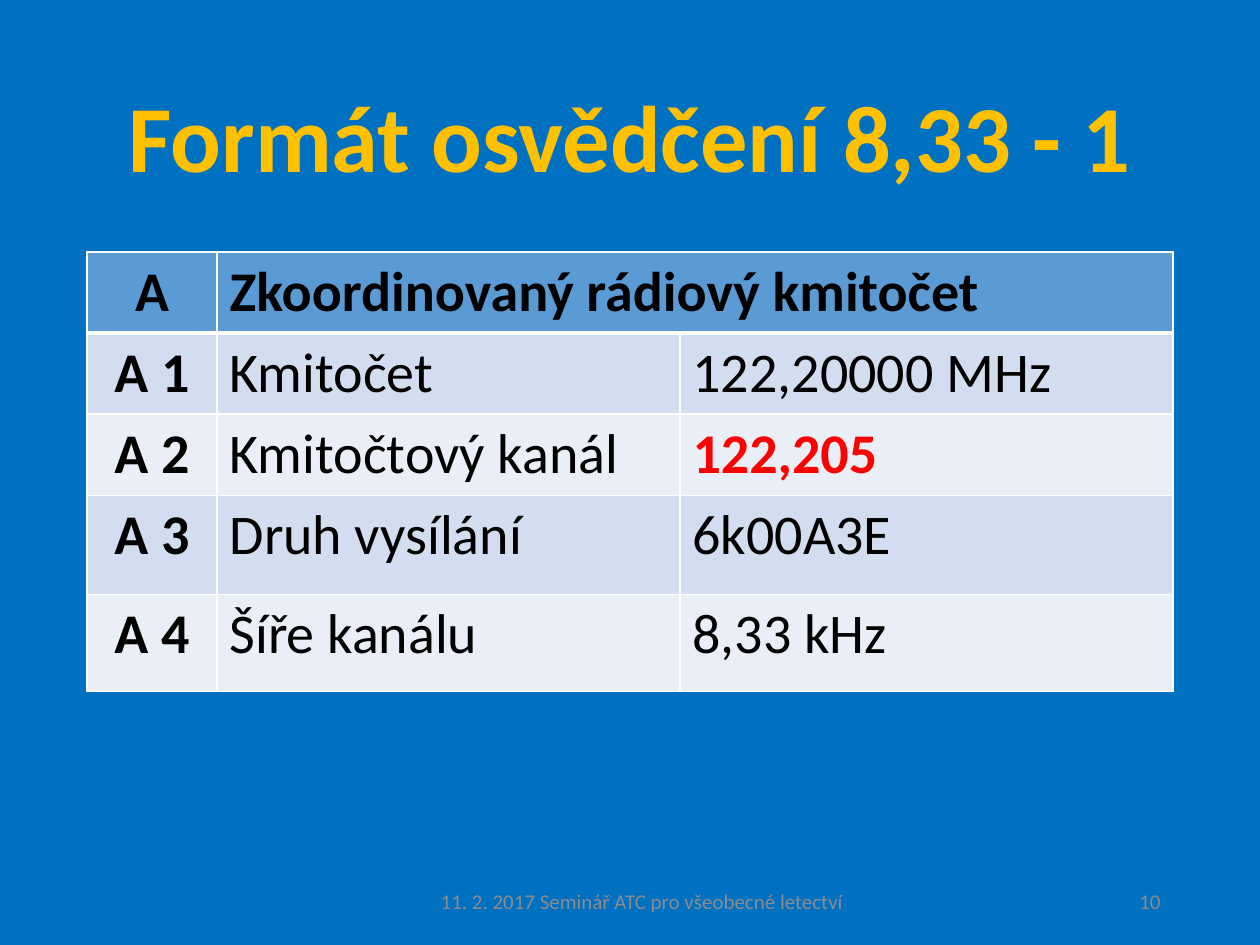
from dataclasses import dataclass

from lxml.etree import SubElement
from pptx import Presentation
from pptx.dml.color import RGBColor
from pptx.enum.text import MSO_ANCHOR, PP_ALIGN
from pptx.oxml.ns import qn
from pptx.slide import Slide
from pptx.table import _Cell
from pptx.text.text import TextFrame
from pptx.util import Emu, Pt

EMU_PER_INCH, PX_PER_INCH = 914400, 126


@dataclass(frozen=True)
class Theme:
    font: str = "Calibri"
    background: str = "0070C0"
    title: str = "FFC000"
    text: str = "000000"
    accent: str = "FF0000"
    footer: str = "8C8C8C"
    header_fill: str = "5B9BD5"
    bands: tuple[str, str] = ("D2DEEF", "EAEFF7")
    border: str = "FFFFFF"
    title_size: int = 54
    table_size: int = 32
    footer_size: int = 12
    thin_border: int = 1
    header_border: int = 3


@dataclass(frozen=True)
class Box:
    left: int
    top: int
    width: int
    height: int

    def emu(self) -> tuple[Emu, Emu, Emu, Emu]:
        return px(self.left), px(self.top), px(self.width), px(self.height)


@dataclass(frozen=True)
class Row:
    code: str
    label: str
    value: str
    height: int
    accent: bool = False


@dataclass(frozen=True)
class Footer:
    text: str
    box: Box
    align: PP_ALIGN


THEME = Theme()
TITLE = "Formát osvědčení 8,33 - 1"
TITLE_BOX = Box(87, 50, 1086, 183)
TABLE_BOX = Box(87, 252, 1086, 439)
COLUMNS = (130, 463, 493)
ROWS = (
    Row("A", "Zkoordinovaný rádiový kmitočet", "", 81),
    Row("A 1", "Kmitočet", "122,20000 MHz", 81),
    Row("A 2", "Kmitočtový kanál", "122,205", 81, accent=True),
    Row("A 3", "Druh vysílání", "6k00A3E", 99),
    Row("A 4", "Šíře kanálu", "8,33 kHz", 97),
)
FOOTERS = (
    Footer("10", Box(890, 876, 283, 50), PP_ALIGN.RIGHT),
    Footer("11. 2. 2017 Seminář ATC pro všeobecné letectví", Box(417, 876, 450, 50), PP_ALIGN.CENTER),
)


def px(length: int) -> Emu:
    return Emu(round(length * EMU_PER_INCH / PX_PER_INCH))


def write(frame: TextFrame, text: str, size: int, color: str,
          align: PP_ALIGN = PP_ALIGN.LEFT, bold: bool = False) -> None:
    frame.word_wrap = True
    para = frame.paragraphs[0]
    para.text = text
    para.alignment = align
    para.font.name = THEME.font
    para.font.size = Pt(size)
    para.font.bold = bold
    para.font.color.rgb = RGBColor.from_string(color)


def set_borders(cell: _Cell, top: int, bottom: int) -> None:
    properties = cell._tc.get_or_add_tcPr()
    widths = {"L": THEME.thin_border, "R": THEME.thin_border, "T": top, "B": bottom}
    for side, width in widths.items():
        line = SubElement(properties, qn(f"a:ln{side}"), w=str(Pt(width)))
        fill = SubElement(line, qn("a:solidFill"))
        SubElement(fill, qn("a:srgbClr"), val=THEME.border)


def add_title(page: Slide) -> None:
    title = page.shapes.title
    title.left, title.top, title.width, title.height = TITLE_BOX.emu()
    title.text_frame.vertical_anchor = MSO_ANCHOR.MIDDLE
    write(title.text_frame, TITLE, THEME.title_size, THEME.title, PP_ALIGN.CENTER, bold=True)
    title.text_frame.paragraphs[0].line_spacing = 0.9


def add_certificate_table(page: Slide) -> None:
    table = page.shapes.add_table(len(ROWS), len(COLUMNS), *TABLE_BOX.emu()).table
    for column, width in zip(table.columns, COLUMNS):
        column.width = px(width)
    for index, row in enumerate(ROWS):
        header = index == 0
        table.rows[index].height = px(row.height)
        fill = THEME.header_fill if header else THEME.bands[(index - 1) % 2]
        top = THEME.header_border if index == 1 else THEME.thin_border
        bottom = THEME.header_border if header else THEME.thin_border
        value_color = THEME.accent if row.accent else THEME.text
        styles = (
            (row.code, THEME.text, PP_ALIGN.CENTER, True),
            (row.label, THEME.text, PP_ALIGN.LEFT, header),
            (row.value, value_color, PP_ALIGN.LEFT, row.accent),
        )
        for cell, (text, color, align, bold) in zip(table.rows[index].cells, styles):
            set_borders(cell, top, bottom)
            cell.fill.solid()
            cell.fill.fore_color.rgb = RGBColor.from_string(fill)
            write(cell.text_frame, text, THEME.table_size, color, align, bold)
    table.cell(0, 1).merge(table.cell(0, 2))


def add_footer(page: Slide, footer: Footer) -> None:
    frame = page.shapes.add_textbox(*footer.box.emu()).text_frame
    frame.vertical_anchor = MSO_ANCHOR.MIDDLE
    write(frame, footer.text, THEME.footer_size, THEME.footer, footer.align)


def main() -> None:
    """Build the slide with the 8,33 kHz certificate format."""
    deck = Presentation()
    deck.slide_width, deck.slide_height = px(1260), px(945)
    page = deck.slides.add_slide(deck.slide_layouts[5])
    page.background.fill.solid()
    page.background.fill.fore_color.rgb = RGBColor.from_string(THEME.background)
    add_title(page)
    add_certificate_table(page)
    for footer in FOOTERS:
        add_footer(page, footer)
    deck.save("out.pptx")


if __name__ == "__main__":
    main()
